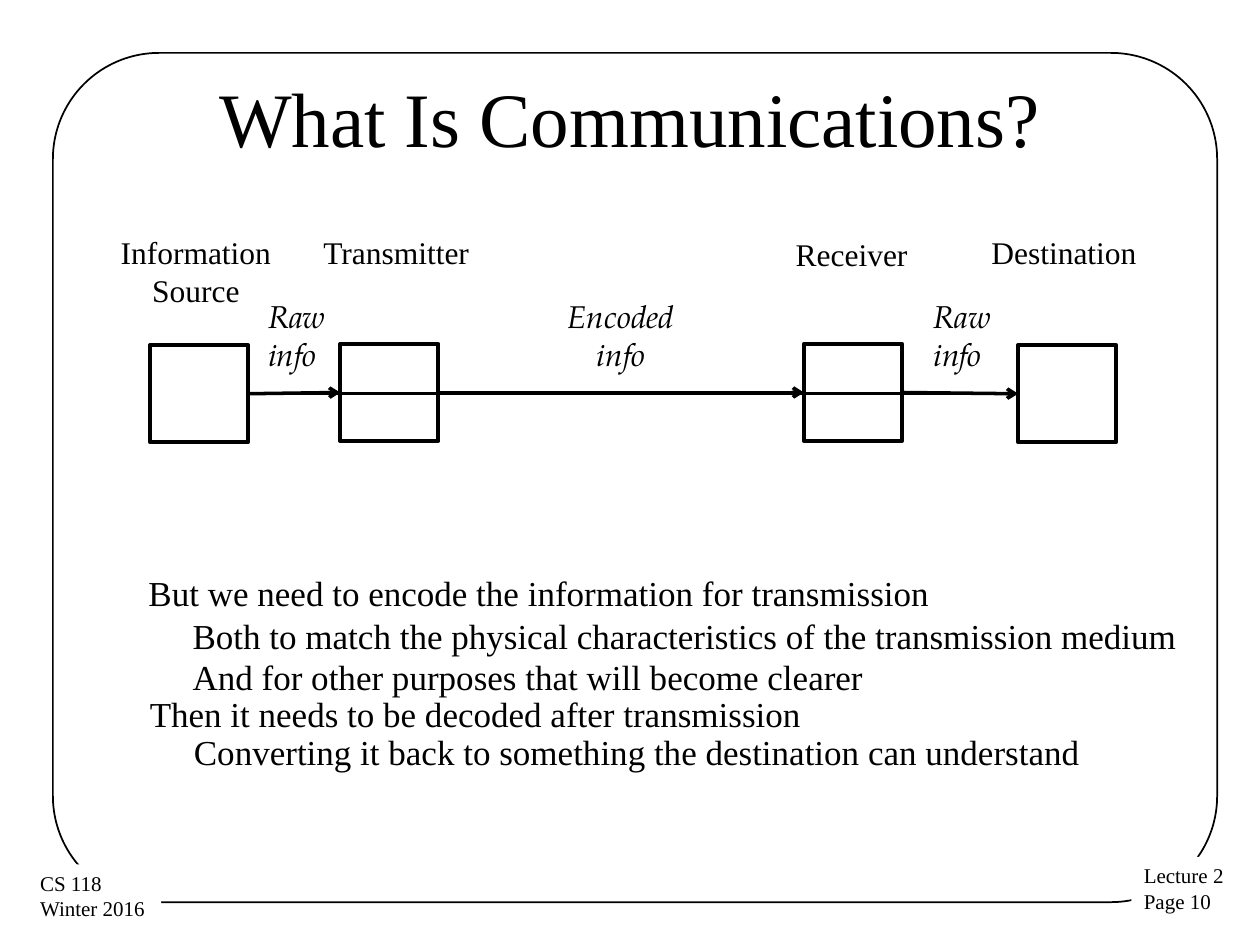
"""Build a slide that explains communication as a chain from source to destination."""
from dataclasses import dataclass

import lxml.etree
import pptx
import pptx.dml.color
import pptx.enum.shapes
import pptx.enum.text
import pptx.oxml.ns
import pptx.util
from pptx.util import Inches

SHAPES = pptx.enum.shapes.MSO_SHAPE
ALIGN = pptx.enum.text.PP_ALIGN
ANCHOR = pptx.enum.text.MSO_ANCHOR
TOP, LEFT, BOTTOM, RIGHT = range(4)


@dataclass(frozen=True)
class Theme:
    ink: pptx.dml.color.RGBColor = pptx.dml.color.RGBColor(0, 0, 0)
    paper: pptx.dml.color.RGBColor = pptx.dml.color.RGBColor(255, 255, 255)
    body_font: str = "Times New Roman"
    signal_font: str = "TeX Gyre Pagella"
    title_size: int = 44
    statement_size: int = 20
    label_size: int = 18
    footer_size: int = 12
    frame_line: float = 1
    box_line: float = 2.25
    arrow_line: float = 2


class SlideBuilder:
    def __init__(self, slide, theme):
        self.slide = slide
        self.theme = theme

    def outline(self, kind, left, top, width, height, line_width):
        shape = self.slide.shapes.add_shape(
            kind, Inches(left), Inches(top), Inches(width), Inches(height))
        shape.shadow.inherit = False
        shape.fill.background()
        shape.line.color.rgb = self.theme.ink
        shape.line.width = pptx.util.Pt(line_width)
        return shape

    def frame(self, left, top, width, height):
        shape = self.outline(SHAPES.ROUNDED_RECTANGLE, left, top, width, height,
                             self.theme.frame_line)
        shape.adjustments[0] = 0.125

    def station(self, left, top):
        return self.outline(SHAPES.RECTANGLE, left, top, 0.78, 0.77, self.theme.box_line)

    def text(self, lines, left, top, width, height, size, align=ALIGN.LEFT,
             wrap=False, signal=False):
        shape = self.slide.shapes.add_textbox(
            Inches(left), Inches(top), Inches(width), Inches(height))
        frame = shape.text_frame
        frame.word_wrap = wrap
        frame.text = "\n".join(lines)
        for paragraph in frame.paragraphs:
            paragraph.alignment = align
            paragraph.font.name = self.theme.signal_font if signal else self.theme.body_font
            paragraph.font.size = pptx.util.Pt(size)
            paragraph.font.italic = signal
            paragraph.font.color.rgb = self.theme.ink
        return shape

    def title(self, wording):
        shape = self.text([wording], 0.5, 0.3, 9, 1.25, self.theme.title_size,
                          ALIGN.CENTER, wrap=True)
        shape.text_frame.vertical_anchor = ANCHOR.MIDDLE

    def footer(self, lines, left, top, width):
        shape = self.text(lines, left, top, width, 0.51, self.theme.footer_size)
        shape.fill.solid()
        shape.fill.fore_color.rgb = self.theme.paper

    def arrow(self, source, target, head="arrow"):
        connector = self.slide.shapes.add_connector(
            pptx.enum.shapes.MSO_CONNECTOR.STRAIGHT, 0, 0, 0, 0)
        connector.begin_connect(source, RIGHT)
        connector.end_connect(target, LEFT)
        connector.line.color.rgb = self.theme.ink
        connector.line.width = pptx.util.Pt(self.theme.arrow_line)
        line = connector.line._get_or_add_ln()
        lxml.etree.SubElement(line, pptx.oxml.ns.qn("a:tailEnd"), type=head)
        lxml.etree.SubElement(connector._element.spPr, pptx.oxml.ns.qn("a:effectLst"))


def main():
    theme = Theme()
    presentation = pptx.Presentation()
    presentation.slide_width = Inches(10)
    presentation.slide_height = Inches(7.5)
    builder = SlideBuilder(
        presentation.slides.add_slide(presentation.slide_layouts[6]), theme)

    builder.frame(0.42, 0.42, 9.24, 6.74)
    builder.footer(["Lecture 2", "Page 10"], 8.98, 6.8, 0.84)
    builder.footer(["CS 118", "Winter 2016"], 0.22, 6.86, 1.06)
    builder.title("What Is Communications?")

    source, transmitter, receiver, destination = [
        builder.station(left, top)
        for left, top in [(1.19, 2.74), (2.7, 2.73), (6.38, 2.73), (8.08, 2.74)]]
    builder.arrow(source, destination, "stealth")
    builder.arrow(source, transmitter)
    builder.arrow(transmitter, receiver)
    builder.arrow(receiver, destination)

    for lines, left, top, width, height in [
        (["Information", "Source"], 0.85, 1.8, 1.41, 0.71),
        (["Transmitter"], 2.46, 1.8, 1.37, 0.4),
        (["Receiver"], 6.21, 1.82, 1.1, 0.4),
        (["Destination"], 7.76, 1.8, 1.37, 0.4),
    ]:
        builder.text(lines, left, top, width, height, theme.label_size, ALIGN.CENTER)

    for wording, left, width, align in [
        ("Raw info", 2.03, 0.76, ALIGN.LEFT),
        ("Encoded info", 4.29, 1.28, ALIGN.CENTER),
        ("Raw info", 7.31, 0.76, ALIGN.LEFT),
    ]:
        builder.text([wording], left, 2.31, width, 0.71, theme.label_size, align,
                     wrap=True, signal=True)

    for wording, left, top, width in [
        ("But we need to encode the information for transmission", 1.08, 4.49, 6.45),
        ("Both to match the physical characteristics of the transmission medium",
         1.43, 4.83, 8.08),
        ("And for other purposes that will become clearer", 1.43, 5.15, 5.64),
        ("Then it needs to be decoded after transmission", 1.09, 5.45, 5.41),
        ("Converting it back to something the destination can understand",
         1.44, 5.75, 7.29),
    ]:
        builder.text([wording], left, top, width, 0.44, theme.statement_size)

    presentation.save("out.pptx")


if __name__ == "__main__":
    main()
